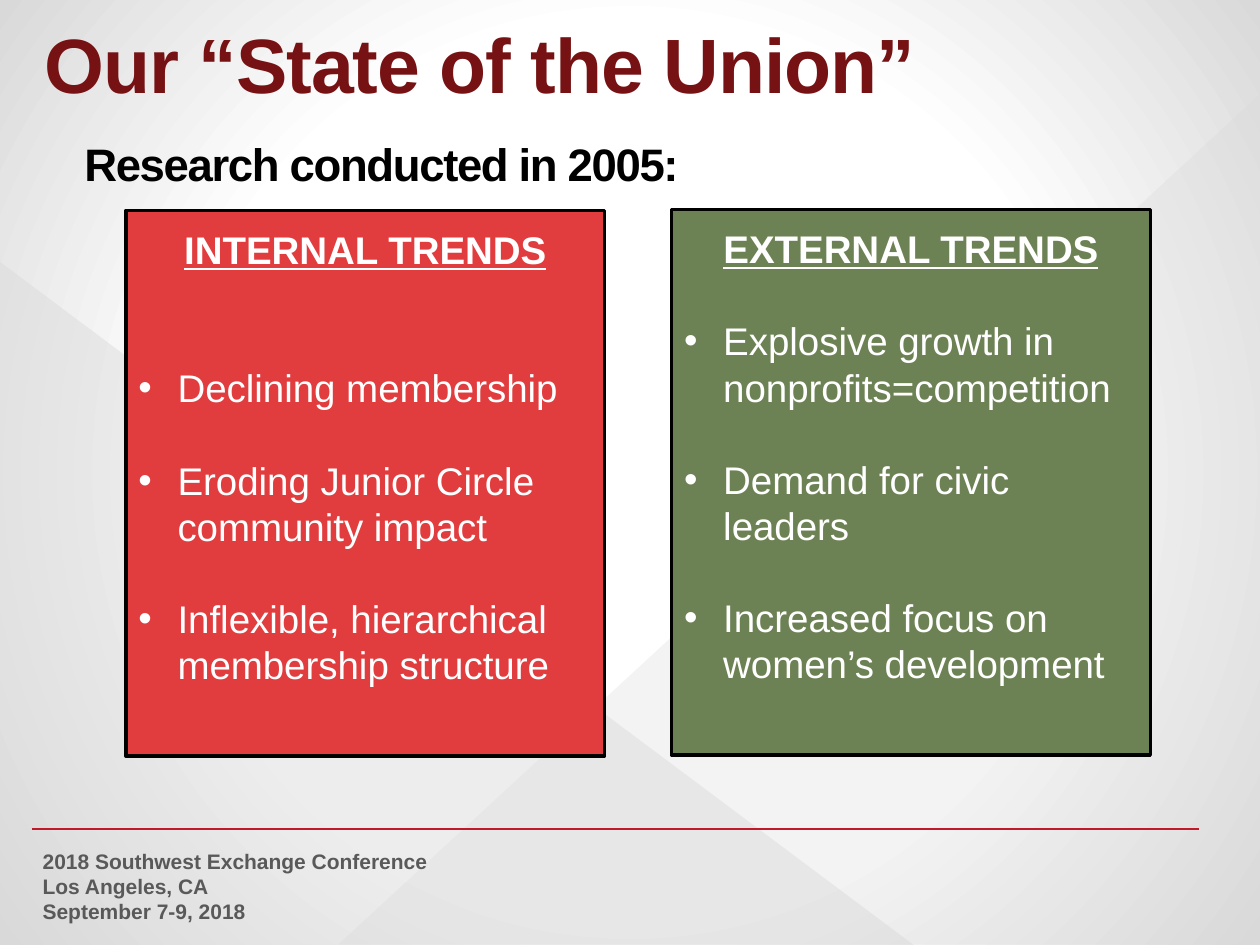
from lxml.etree import SubElement
from pptx import Presentation
from pptx.dml.color import RGBColor
from pptx.enum.shapes import MSO_CONNECTOR, MSO_SHAPE
from pptx.enum.text import MSO_ANCHOR, PP_ALIGN
from pptx.oxml import parse_xml
from pptx.oxml.ns import nsdecls, qn
from pptx.util import Cm, Pt

FONT = "Arial"
LINE_GAP = 26.3
PANELS = [
    (2.54, 4.24, "E13C3E", "INTERNAL TRENDS", 2 * LINE_GAP,
     ["Declining membership",
      "Eroding Junior Circle community impact",
      "Inflexible, hierarchical membership structure"]),
    (13.54, 4.22, "6D8254", "EXTERNAL TRENDS", LINE_GAP,
     ["Explosive growth in nonprofits=competition",
      "Demand for civic leaders",
      "Increased focus on women’s development"]),
]
FOOTER = ["2018 Southwest Exchange Conference", "Los Angeles, CA",
          "September 7-9, 2018"]


def rgb(value):
    return RGBColor.from_string(value)


def set_background(slide):
    """Radial gradient, white in the middle and grey at the edges."""
    slide.background.fill.solid()
    bg_pr = slide._element.find(".//" + qn("p:bgPr"))
    bg_pr.replace(bg_pr[0], parse_xml(
        f'<a:gradFill {nsdecls("a")} rotWithShape="1"><a:gsLst>'
        '<a:gs pos="0"><a:srgbClr val="FFFFFF"/></a:gs>'
        '<a:gs pos="57000"><a:srgbClr val="FFFFFF"/></a:gs>'
        '<a:gs pos="100000"><a:srgbClr val="D9D9D9"/></a:gs></a:gsLst>'
        '<a:path path="circle"><a:fillToRect l="50000" t="50000" '
        'r="50000" b="50000"/></a:path></a:gradFill>'))


def add_box(slide, shape_type, x, y, w, h, fill):
    sp = slide.shapes.add_shape(shape_type, Cm(x), Cm(y), Cm(w), Cm(h))
    sp.shadow.inherit = False
    sp.fill.solid()
    sp.fill.fore_color.rgb = rgb(fill)
    sp.line.fill.background()
    return sp


def add_triangle(slide, x, y, w, h, opacity, rotation=0):
    sp = add_box(slide, MSO_SHAPE.RIGHT_TRIANGLE, x, y, w, h, "D9D9D9")
    sp.rotation = rotation
    color = sp._element.spPr.find(qn("a:solidFill"))[0]
    SubElement(color, qn("a:alpha"), val=str(opacity * 1000))


def add_text_box(slide, x, y, w, h):
    tf = slide.shapes.add_textbox(Cm(x), Cm(y), Cm(w), Cm(h)).text_frame
    tf.margin_left = tf.margin_right = tf.margin_top = tf.margin_bottom = 0
    return tf


def add_bullet(p):
    pPr = p._p.get_or_add_pPr()
    pPr.set("marL", str(Cm(0.79)))
    pPr.set("indent", str(-Cm(0.79)))
    SubElement(pPr, qn("a:buFont"), typeface=FONT)
    SubElement(pPr, qn("a:buChar"), char="•")


def write(tf, text, size, color, bold=False, underline=False, spacing=0,
          align=PP_ALIGN.LEFT, before=0, bullet=False):
    """Fill the empty first paragraph, or add one after the others."""
    p = tf.add_paragraph() if tf.text else tf.paragraphs[0]
    if bullet:
        add_bullet(p)
    p.alignment = align
    p.space_before = Pt(before)
    r = p.add_run()
    r.text = text
    r.font.name = FONT
    r.font.size = Pt(size)
    r.font.bold = bold
    r.font.underline = underline
    r.font.color.rgb = rgb(color)
    if spacing:
        r._r.get_or_add_rPr().set("spc", str(int(spacing * 100)))
    return p


def add_rule(slide):
    line = slide.shapes.add_connector(
        MSO_CONNECTOR.STRAIGHT, Cm(0.64), Cm(16.71), Cm(24.18), Cm(16.71))
    line.line.color.rgb = rgb("BF192A")
    line.line.width = Pt(1.25)
    SubElement(line._element.spPr, qn("a:effectLst"))


def add_footer(slide):
    tf = add_text_box(slide, 0.86, 17.45, 10.69, 0.84)
    tf.word_wrap = False
    tf.vertical_anchor = MSO_ANCHOR.MIDDLE
    for text in FOOTER:
        write(tf, text, 12, "595959", bold=True)


def format_title(slide):
    title = slide.shapes.title
    title.left, title.top = Cm(0.64), Cm(0.64)
    title.width, title.height = Cm(23.11), Cm(2.11)
    slide.shapes._spTree.append(title._element)  # in front of the backdrop
    tf = title.text_frame
    tf.vertical_anchor = MSO_ANCHOR.TOP
    p = write(tf, "Our “State of the Union”", 44, "761213", bold=True,
              spacing=-0.6)
    p.line_spacing = 0.75


def add_panel(slide, x, y, fill, heading, first_gap, items):
    sp = add_box(slide, MSO_SHAPE.RECTANGLE, x, y, 9.65, 11, fill)
    sp.line.color.rgb = rgb("000000")
    sp.line.width = Pt(2)
    tf = sp.text_frame
    tf.word_wrap = True
    tf.vertical_anchor = MSO_ANCHOR.TOP
    tf.margin_top = Cm(0.32)
    write(tf, heading, 22, "FFFFFF", bold=True, underline=True,
          align=PP_ALIGN.CENTER)
    for i, item in enumerate(items):
        write(tf, item, 22, "FFFFFF", bullet=True,
              before=LINE_GAP if i else first_gap)


def main():
    prs = Presentation()
    prs.slide_width, prs.slide_height = Cm(25.4), Cm(19.05)
    slide = prs.slides.add_slide(prs.slide_layouts[5])
    set_background(slide)
    add_triangle(slide, 7.54, 1.17, 17.15, 18.59, 31, rotation=270)
    add_triangle(slide, 0, 5.28, 18.42, 13.77, 46)
    add_footer(slide)
    add_rule(slide)
    format_title(slide)
    for panel in PANELS:
        add_panel(slide, *panel)
    tf = add_text_box(slide, 1.7, 2.74, 14.86, 1.24)
    tf.word_wrap = True
    write(tf, "Research conducted in 2005:", 26, "000000", bold=True,
          spacing=-0.8)
    prs.save("out.pptx")


if __name__ == "__main__":
    main()
